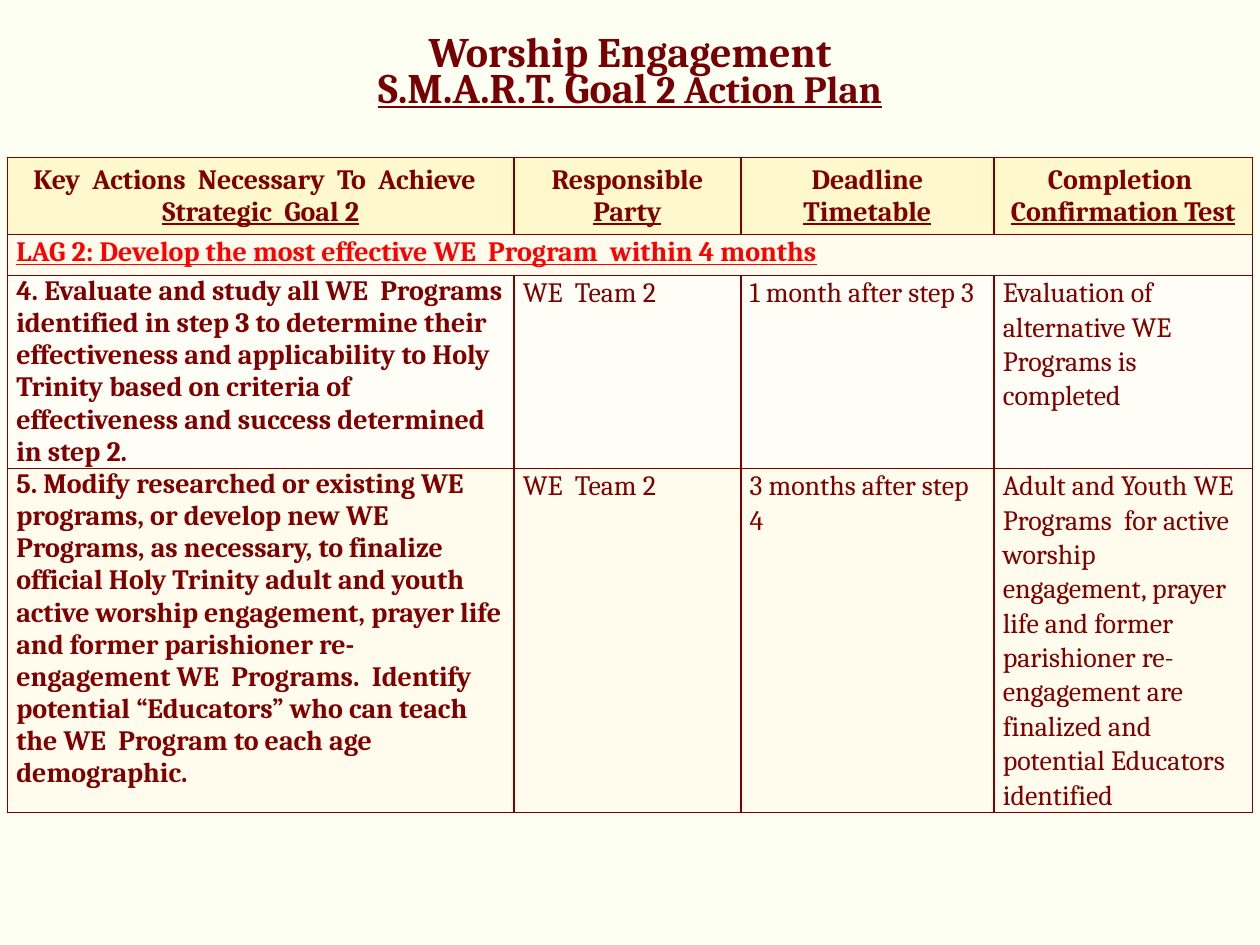
import copy

import pptx
import pptx.dml.color
import pptx.enum.text
import pptx.oxml
import pptx.oxml.ns
import pptx.util

MAROON, TITLE_MAROON, RED = "800000", "760002", "FF0000"
BACKGROUND, HEADER_FILL, ODD_FILL, EVEN_FILL = "FEFFF3", "FFF8CD", "FFFCED", "FFFEF6"
CENTER = pptx.enum.text.PP_ALIGN.CENTER
LEFT = pptx.enum.text.PP_ALIGN.LEFT

TITLE = [
    [("Worship Engagement", {}), ("\v", {}),
     ("S.M.A.R.T. Goal ", {"underline": True}),
     ("2 Action Plan", {"underline": True, "size": 22})],
]
HEADERS = [
    [[("Key  Actions  Necessary  To  Achieve  ", {})], [("Strategic  Goal 2", {"underline": True})]],
    [[("Responsible ", {}), ("Party", {"underline": True})]],
    [[("Deadline ", {}), ("Timetable", {"underline": True})]],
    [[("Completion ", {})], [("Confirmation Test", {"underline": True})]],
]
GOAL = "LAG 2: Develop the most effective WE  Program  within 4 months"
ACTIONS = [
    ("4. Evaluate and study all WE  Programs identified in step 3 to determine their "
     "effectiveness and applicability to Holy Trinity based on criteria of effectiveness "
     "and success determined in step 2.",
     "WE  Team 2",
     "1 month after step 3",
     "Evaluation of alternative WE  Programs is completed"),
    ("5. Modify researched or existing WE programs, or develop new WE Programs, as necessary, "
     "to finalize official Holy Trinity adult and youth active worship engagement, prayer life "
     "and former parishioner re-engagement WE  Programs.  Identify potential “Educators” who "
     "can teach the WE  Program to each age demographic.",
     "WE  Team 2",
     "3 months after step 4",
     "Adult and Youth WE  Programs  for active worship engagement, prayer life and former "
     "parishioner re-engagement are finalized and potential Educators identified"),
]
COLUMN_WIDTHS = [40.2, 18, 20.1, 20.5]
ROW_HEIGHTS = [6.1, 3.25, 15.3, 27.3]


def color(value):
    """Turn a hex string into a colour."""
    return pptx.dml.color.RGBColor.from_string(value)


class ActionPlanSlide:
    """Hold the style and the slide, laid out on a grid of 100 columns by 75 rows."""

    font_name = "Cambria"
    columns, rows = 100, 75

    def __init__(self, presentation):
        """Add a title-only slide with the plan's background."""
        self.column = presentation.slide_width / self.columns
        self.row = presentation.slide_height / self.rows
        self.slide = presentation.slides.add_slide(presentation.slide_layouts[5])
        fill = self.slide.background.fill
        fill.solid()
        fill.fore_color.rgb = color(BACKGROUND)

    def across(self, count):
        """Return the width of a number of grid columns."""
        return round(count * self.column)

    def down(self, count):
        """Return the height of a number of grid rows."""
        return round(count * self.row)

    def fill_text(self, text_frame, paragraphs, size, ink, align, spacing=1.0, bold=True):
        """Fill a text frame with paragraphs of formatted runs."""
        for index, pieces in enumerate(paragraphs):
            paragraph = text_frame.add_paragraph() if index else text_frame.paragraphs[0]
            paragraph.alignment = align
            paragraph.line_spacing = spacing
            for text, extra in pieces:
                if text == "\v":
                    paragraph.add_line_break()
                    line_break = paragraph._p[-1]
                    line_break.append(copy.deepcopy(paragraph.runs[-1].font._element))
                    continue
                run = paragraph.add_run()
                run.text = text
                run.font.name = self.font_name
                run.font.size = pptx.util.Pt(extra.get("size", size))
                run.font.bold = bold
                run.font.underline = extra.get("underline", False)
                run.font.color.rgb = color(ink)

    def title(self, left, top, width, height, paragraphs):
        """Place and fill the title placeholder."""
        shape = self.slide.shapes.title
        shape.left, shape.top = self.across(left), self.down(top)
        shape.width, shape.height = self.across(width), self.down(height)
        shape.text_frame.vertical_anchor = pptx.enum.text.MSO_ANCHOR.MIDDLE
        self.fill_text(shape.text_frame, paragraphs, 24, TITLE_MAROON, CENTER, 0.7)

    def table(self, left, top, widths, heights):
        """Add an empty table with the given column widths and row heights."""
        frame = self.slide.shapes.add_table(
            len(heights), len(widths), self.across(left), self.down(top),
            self.across(sum(widths)), self.down(sum(heights)))
        for column, width in zip(frame.table.columns, widths):
            column.width = self.across(width)
        for row, height in zip(frame.table.rows, heights):
            row.height = self.down(height)
        return frame.table

    def border(self, cell):
        """Draw a thin line on the four sides of a cell."""
        properties = cell._tc.get_or_add_tcPr()
        for index, side in enumerate(("lnL", "lnR", "lnT", "lnB")):
            properties.insert(index, pptx.oxml.parse_xml(
                f'<a:{side} {pptx.oxml.ns.nsdecls("a")} w="12700"><a:solidFill>'
                f'<a:srgbClr val="{MAROON}"/></a:solidFill></a:{side}>'))

    def cell(self, cell, fill, paragraphs=(), ink=MAROON, align=LEFT,
             spacing=1.0, bold=True, tight=True):
        """Fill, outline and letter one table cell."""
        cell.fill.solid()
        cell.fill.fore_color.rgb = color(fill)
        self.border(cell)
        if tight:
            cell.margin_left = cell.margin_right = pptx.util.Inches(0.07)
            cell.margin_top = cell.margin_bottom = 0
        self.fill_text(cell.text_frame, paragraphs, 16, ink, align, spacing, bold)


def main():
    """Build the action plan and save it."""
    presentation = pptx.Presentation()
    presentation.slide_width = pptx.util.Inches(10)
    presentation.slide_height = pptx.util.Inches(7.5)
    plan = ActionPlanSlide(presentation)
    plan.title(10.9, -0.3, 78.2, 12.5, TITLE)

    table = plan.table(0.6, 12.5, COLUMN_WIDTHS, ROW_HEIGHTS)
    for index, header in enumerate(HEADERS):
        plan.cell(table.cell(0, index), HEADER_FILL, header, align=CENTER, tight=False)

    table.cell(1, 0).merge(table.cell(1, len(COLUMN_WIDTHS) - 1))
    plan.cell(table.cell(1, 0), ODD_FILL, [[(GOAL, {"underline": True})]], RED, spacing=1.07)
    for index in range(1, len(COLUMN_WIDTHS)):
        plan.cell(table.cell(1, index), ODD_FILL)

    for row, (action, fill) in enumerate(zip(ACTIONS, (EVEN_FILL, ODD_FILL)), start=2):
        for index, text in enumerate(action):
            first = index == 0
            plan.cell(table.cell(row, index), fill, [[(text, {})]],
                      spacing=1.0 if first else 1.07, bold=first)

    presentation.save("out.pptx")


if __name__ == "__main__":
    main()
